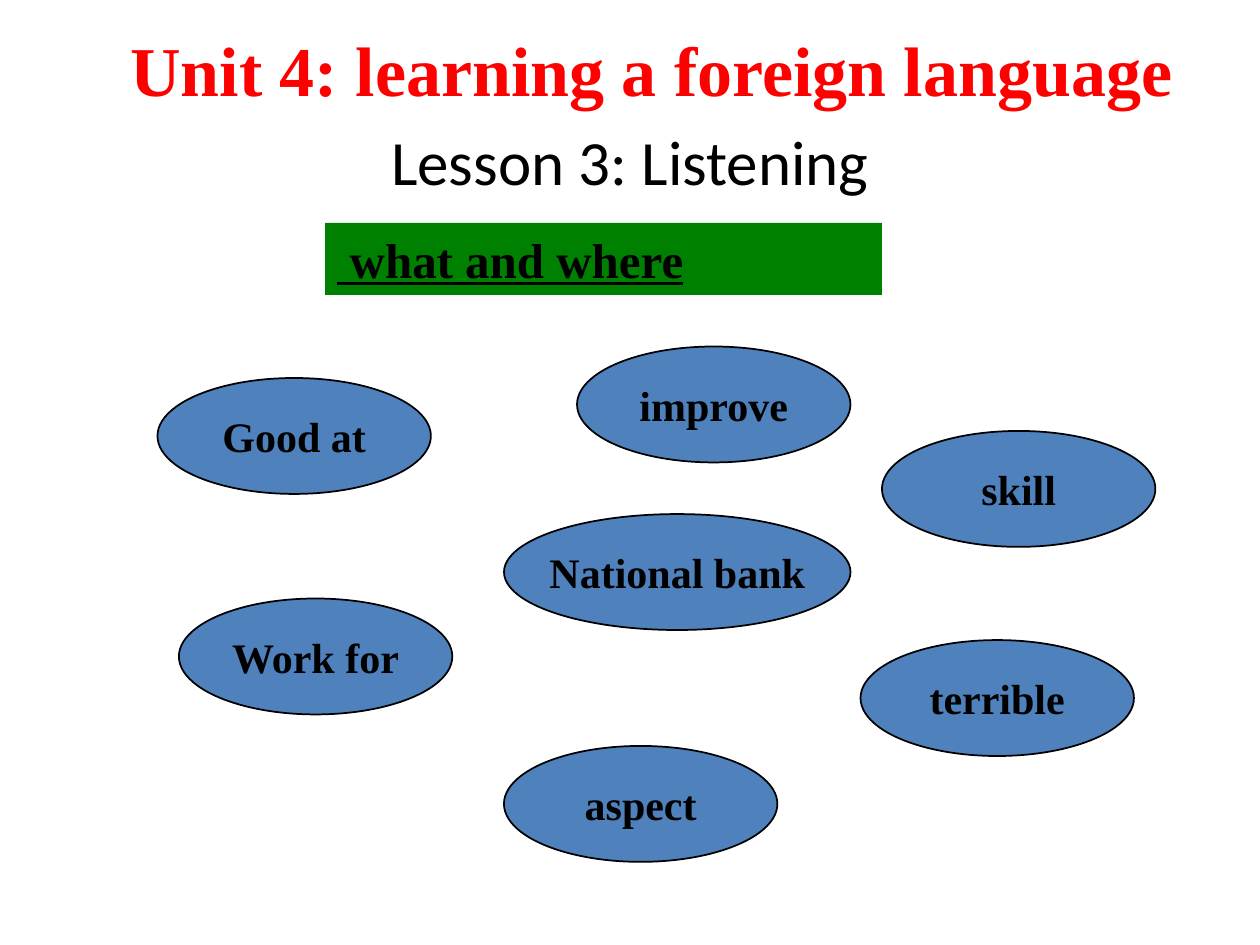
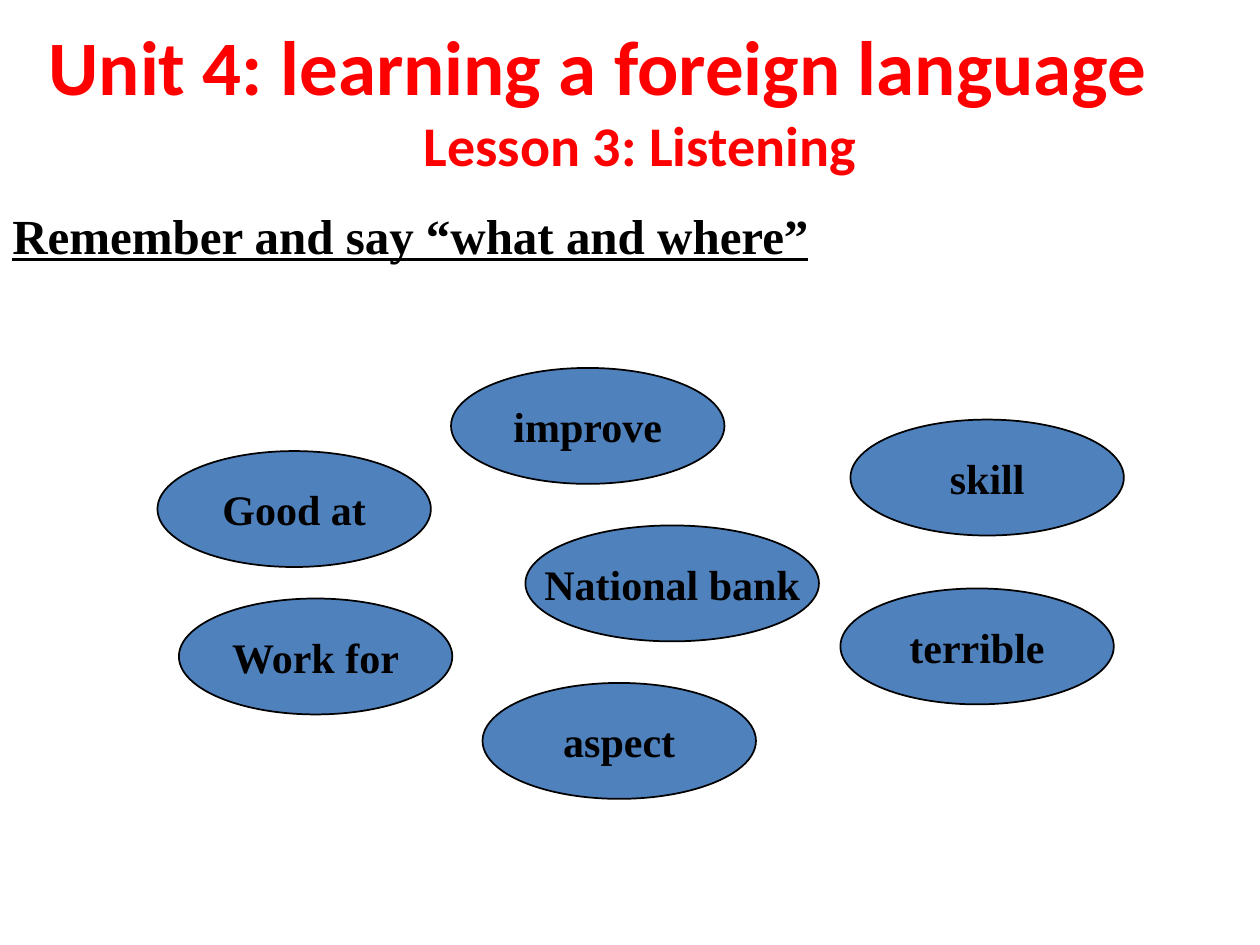
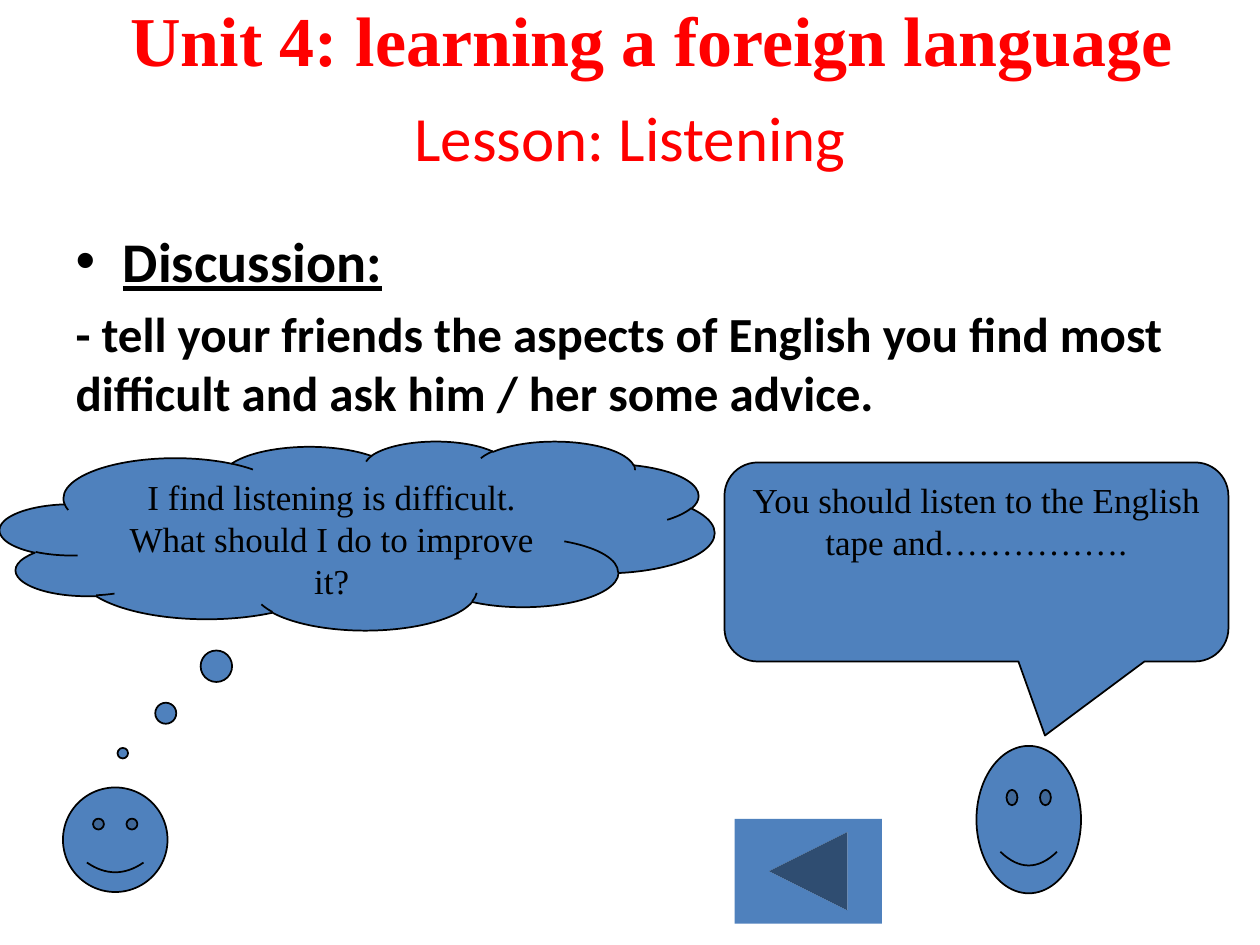
"""Build three slides of a listening lesson about learning a foreign language."""
from lxml.etree import SubElement
from pptx import Presentation
from pptx.dml.color import RGBColor
from pptx.enum.shapes import MSO_SHAPE as Preset
from pptx.enum.text import MSO_ANCHOR as Anchor, MSO_AUTO_SIZE as AutoSize, PP_ALIGN as Align
from pptx.oxml.ns import qn
from pptx.util import Inches, Pt

COLORS = {"red": "FF0000", "black": "000000", "blue": "4F81BD", "green": "008000"}
SERIF, SANS = "Times New Roman", "Calibri"

UNIT = "Unit 4: learning a foreign language"
LESSON = "Lesson 3: Listening"
WORD_WIDTH, WORD_HEIGHT = 2.17, 0.92

BINGO_WORDS = [
    ("Good at", 1.25, 3, WORD_WIDTH),
    ("improve", 4.58, 2.75, WORD_WIDTH),
    ("National bank", 4, 4.08, 2.75),
    ("Work for", 1.42, 4.75, WORD_WIDTH),
    ("aspect", 4, 5.92, WORD_WIDTH),
    ("skill", 7, 3.42, WORD_WIDTH),
    ("terrible", 6.83, 5.08, WORD_WIDTH),
]
MEMORY_WORDS = [
    ("Good at", 1.25, 3.58, WORD_WIDTH),
    ("improve", 3.58, 2.92, WORD_WIDTH),
    ("National bank", 4.17, 4.17, 2.33),
    ("Work for", 1.42, 4.75, WORD_WIDTH),
    ("aspect", 3.83, 5.42, WORD_WIDTH),
    ("skill", 6.75, 3.33, WORD_WIDTH),
    ("terrible", 6.67, 4.67, WORD_WIDTH),
]
DISCUSSION = [
    ("Discussion:", 32, True),
    ("- tell your friends the aspects of English you find most difficult "
     "and ask him / her some advice.", 28, False),
]
CALLOUTS = [
    (Preset.CLOUD_CALLOUT, (0, 3.5, 5.67, 1.5), (-0.328, 1.152),
     "I find listening is difficult. What should I do to improve it?"),
    (Preset.ROUNDED_RECTANGULAR_CALLOUT, (5.75, 3.67, 4, 1.58), (0.136, 0.872, 0.167),
     "You should listen to the English tape and……………."),
]
FACES = [(0.5, 6.25, 0.83, 0.83), (7.75, 5.92, 0.83, 1.17)]
BACK_BUTTON = (5.83, 6.5, 1.17, 0.83)


def color(name):
    return RGBColor.from_string(COLORS[name])


def inches(box):
    return [Inches(length) for length in box]


def place(shape, box):
    shape.left, shape.top, shape.width, shape.height = inches(box)


def add_run(paragraph, text, size, font=SERIF, ink="black", bold=False, underline=None):
    run = paragraph.add_run()
    run.text = text
    run.font.size, run.font.name = Pt(size), font
    run.font.bold, run.font.underline = bold, underline
    run.font.color.rgb = color(ink)


def write(shape, text, size, align=Align.CENTER, anchor=Anchor.MIDDLE, wrap=True, **style):
    frame = shape.text_frame
    frame.auto_size, frame.word_wrap = AutoSize.NONE, wrap
    frame.vertical_anchor = anchor
    frame.paragraphs[0].alignment = align
    add_run(frame.paragraphs[0], text, size, **style)


def add_title(slide, box, text, size, **style):
    place(slide.shapes.title, box)
    write(slide.shapes.title, text, size, font=SANS, **style)


def add_text(slide, box, text, size, **style):
    write(slide.shapes.add_textbox(*inches(box)), text, size, **style)


def add_unit(slide, top, height):
    add_text(slide, (0.67, top, 9, height), UNIT, 40, ink="red", bold=True)


def add_preset(slide, preset, box, fill="blue", outlined=True):
    shape = slide.shapes.add_shape(preset, *inches(box))
    shape.shadow.inherit = False
    shape.fill.solid()
    shape.fill.fore_color.rgb = color(fill)
    if outlined:
        shape.line.color.rgb = color("black")
        shape.line.width = Pt(1)
    else:
        shape.line.fill.background()
    return shape


def add_words(slide, words):
    for word, left, top, width in words:
        ellipse = add_preset(slide, Preset.OVAL, (left, top, width, WORD_HEIGHT))
        write(ellipse, word, 24, wrap=False, bold=True)


def fill_discussion(body):
    place(body, (0.5, 1.75, 9, 4.95))
    frame = body.text_frame
    frame.auto_size = AutoSize.NONE
    for index, (text, size, heading) in enumerate(DISCUSSION):
        paragraph = frame.add_paragraph() if index else frame.paragraphs[0]
        if not heading:
            properties = paragraph._p.get_or_add_pPr()
            properties.set("marL", "0")
            properties.set("indent", "0")
            SubElement(properties, qn("a:buNone"))
        add_run(paragraph, text, size, font=SANS, bold=True, underline=heading)


def build_bingo(slide):
    add_title(slide, (0.5, 1.08, 9, 0.39), LESSON, 36)
    add_unit(slide, 0.17, 0.75)
    add_words(slide, BINGO_WORDS)
    banner = add_preset(slide, Preset.RECTANGLE, (2.58, 1.77, 4.42, 0.57), "green", outlined=False)
    write(banner, " what and where", 28, align=Align.LEFT, anchor=Anchor.TOP,
          bold=True, underline=True)


def build_memory(slide):
    add_title(slide, (0, 0.08, 9.5, 0.86), UNIT, 44, ink="red", bold=True)
    add_text(slide, (1.58, 0.83, 7, 0.58), LESSON, 32, anchor=Anchor.TOP,
             font=SANS, ink="red", bold=True)
    add_text(slide, (0, 1.58, 7.67, 0.57), "Remember and say “what and where”", 28,
             align=Align.LEFT, anchor=Anchor.TOP, bold=True, underline=True)
    add_words(slide, MEMORY_WORDS)


def build_discussion(slide):
    add_title(slide, (0.5, 0.75, 9, 0.67), "Lesson: Listening", 36, ink="red")
    add_unit(slide, 0.08, 0.45)
    fill_discussion(slide.placeholders[1])
    for preset, box, adjustments, speech in CALLOUTS:
        callout = add_preset(slide, preset, box)
        for index, value in enumerate(adjustments):
            callout.adjustments[index] = value
        write(callout, speech, 20, anchor=Anchor.TOP)
    for box in FACES:
        add_preset(slide, Preset.SMILEY_FACE, box)
    add_preset(slide, Preset.ACTION_BUTTON_BACK_OR_PREVIOUS, BACK_BUTTON, outlined=False)


def main():
    presentation = Presentation()
    presentation.slide_width, presentation.slide_height = Inches(10), Inches(7.5)
    title_only = presentation.slide_layouts.get_by_name("Title Only")
    title_and_content = presentation.slide_layouts.get_by_name("Title and Content")
    for layout, build in [(title_only, build_bingo), (title_only, build_memory),
                          (title_and_content, build_discussion)]:
        build(presentation.slides.add_slide(layout))
    presentation.save("out.pptx")


if __name__ == "__main__":
    main()
